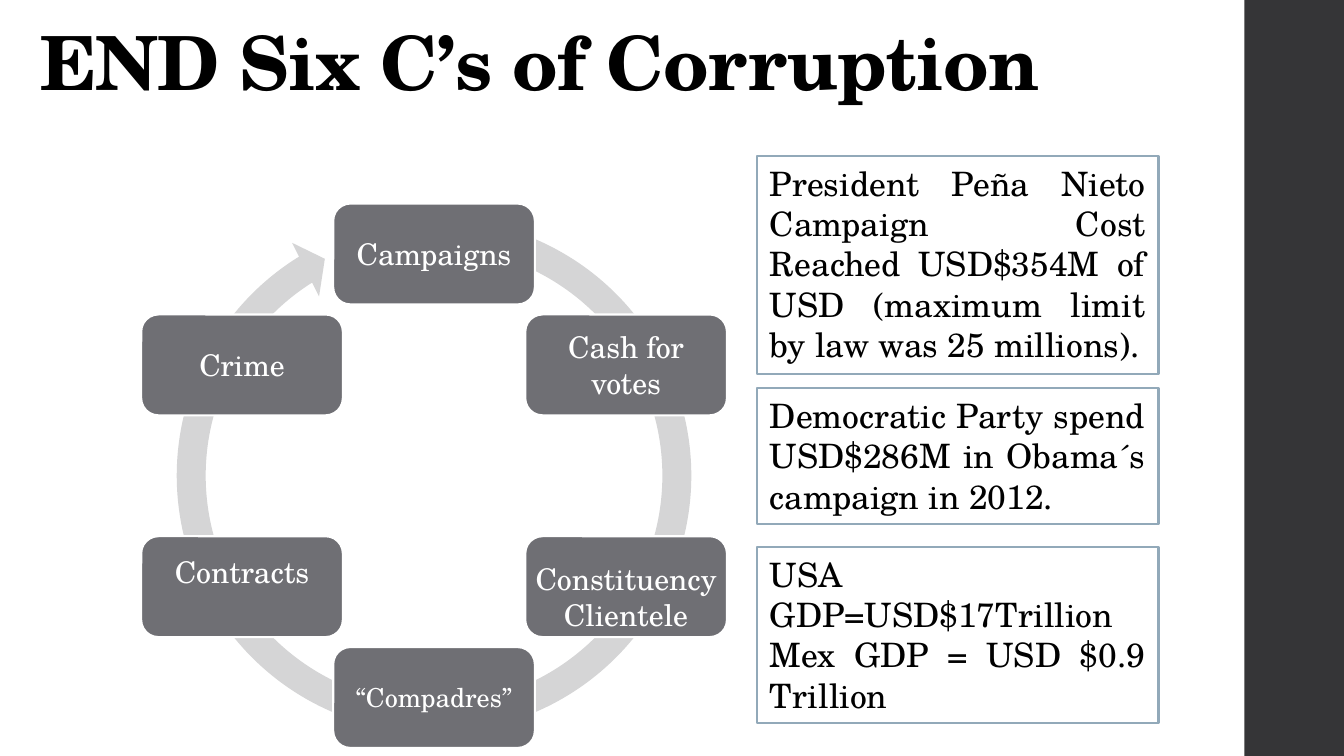
from math import cos, radians, sin

from pptx import Presentation
from pptx.dml.color import RGBColor
from pptx.enum.shapes import MSO_SHAPE as Shape
from pptx.enum.text import MSO_ANCHOR as Anchor, PP_ALIGN as Align
from pptx.util import Inches, Pt

FONT = "TeX Gyre Schola"
BLACK = RGBColor(0x00, 0x00, 0x00)
WHITE = RGBColor(0xFF, 0xFF, 0xFF)
SIDEBAR = RGBColor(0x35, 0x35, 0x37)
RING = RGBColor(0xD5, 0xD5, 0xD6)
NODE = RGBColor(0x6F, 0x6F, 0x74)
FACT_BORDER = RGBColor(0x92, 0xA9, 0xB9)

SLIDE_WIDTH = 10
SLIDE_HEIGHT = SLIDE_WIDTH * 9 / 16
NODE_WIDTH, NODE_HEIGHT = 1.5, 0.75
RING_ADJUSTMENTS = (0.053, 3.13, 142.84, 170.95, 0.055)

# Label, size, top inset, bottom inset; clockwise from the top
NODES = [
    ("Campaigns", 16, 0.07, 0.07),
    ("Cash for votes", 16, 0.07, 0.07),
    ("Constituency Clientele", 16, 0.17, 0.02),
    ("“Compadres”", 14, 0.07, 0.07),
    ("Contracts", 16, 0.05, 0.28),
    ("Crime", 16, 0.07, 0.07),
]

# Top, height, paragraphs
FACTS = [
    (1.16, 1.62, ["President Peña Nieto Campaign Cost Reached USD$354M of USD "
                  "(maximum limit by law was 25 millions)."]),
    (2.89, 1.01, ["Democratic Party spend USD$286M in Obama´s campaign in 2012."]),
    (4.07, 1.31, ["USA GDP=USD$17Trillion", "Mex GDP = USD $0.9 Trillion"]),
]


def add_box(slide, kind, left, top, width, height, fill, line=None):
    shape = slide.shapes.add_shape(
        kind, Inches(left), Inches(top), Inches(width), Inches(height))
    shape.shadow.inherit = False
    shape.fill.solid()
    shape.fill.fore_color.rgb = fill
    if line is None:
        shape.line.fill.background()
    else:
        shape.line.color.rgb = line
        shape.line.width = Pt(1.1)
    return shape


def write(shape, paragraphs, size, color, align, anchor=Anchor.MIDDLE, bold=False):
    frame = shape.text_frame
    frame.word_wrap = True
    frame.vertical_anchor = anchor
    frame.text = "\n".join(paragraphs)
    for paragraph in frame.paragraphs:
        paragraph.alignment = align
        for run in paragraph.runs:
            run.font.name = FONT
            run.font.size = Pt(size)
            run.font.bold = bold
            run.font.color.rgb = color


def add_title(slide, left, top, width, height):
    title = slide.shapes.add_textbox(
        Inches(left), Inches(top), Inches(width), Inches(height))
    write(title, ["END Six C’s of Corruption"], 40, BLACK, Align.LEFT,
          Anchor.BOTTOM, bold=True)
    paragraph = title.text_frame.paragraphs[0]
    paragraph.line_spacing = 0.9
    paragraph.runs[0].font._element.set("spc", "-40")


def add_cycle(slide, left, top, size):
    """Draw the ring arrow with the nodes evenly spaced around its centre."""
    ring = add_box(slide, Shape.CIRCULAR_ARROW, left, top, size, size, RING)
    for index, value in enumerate(RING_ADJUSTMENTS):
        ring.adjustments[index] = value

    center_x, center_y = left + size / 2, top + size / 2
    radius = 1.65
    for index, (label, font_size, inset_top, inset_bottom) in enumerate(NODES):
        angle = radians(index * 360 / len(NODES))
        node = add_box(
            slide, Shape.ROUNDED_RECTANGLE,
            center_x + radius * sin(angle) - NODE_WIDTH / 2,
            center_y - radius * cos(angle) - NODE_HEIGHT / 2,
            NODE_WIDTH, NODE_HEIGHT, NODE, WHITE)
        node.adjustments[0] = 0.17
        frame = node.text_frame
        frame.margin_left = frame.margin_right = Inches(0.03)
        frame.margin_top = Inches(inset_top)
        frame.margin_bottom = Inches(inset_bottom)
        write(node, [label], font_size, WHITE, Align.CENTER)


def add_facts(slide, left, width):
    for top, height, paragraphs in FACTS:
        fact = add_box(slide, Shape.RECTANGLE, left, top, width, height,
                       WHITE, FACT_BORDER)
        write(fact, paragraphs, 18, BLACK, Align.JUSTIFY, Anchor.TOP)


def main():
    presentation = Presentation()
    presentation.slide_width = Inches(SLIDE_WIDTH)
    presentation.slide_height = Inches(SLIDE_HEIGHT)
    slide = presentation.slides.add_slide(presentation.slide_layouts[6])

    add_box(slide, Shape.RECTANGLE, 9.26, 0, SLIDE_WIDTH - 9.26, SLIDE_HEIGHT, SIDEBAR)
    add_title(slide, 0.2, -0.1, 10, 0.94)
    add_cycle(slide, 1.2, 1.51, 4.06)
    add_facts(slide, 5.63, 2.99)
    presentation.save("out.pptx")


if __name__ == "__main__":
    main()
